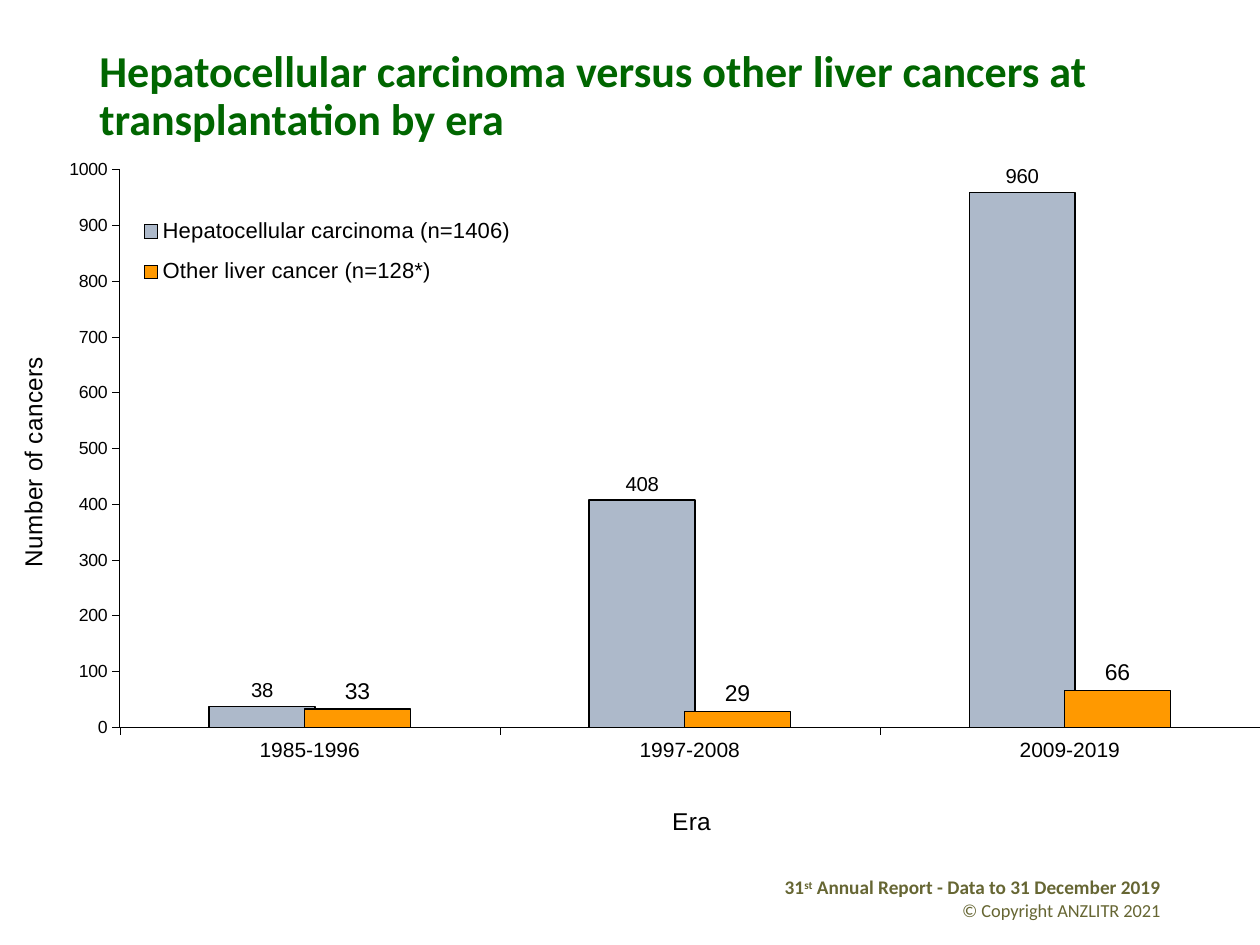
"""Build the slide on liver cancers at transplantation by era."""
from pptx import Presentation
from pptx.chart.data import CategoryChartData as Data
from pptx.dml.color import RGBColor as RGB
from pptx.enum.chart import XL_CHART_TYPE as Kind, XL_LABEL_POSITION as Spot
from pptx.enum.chart import XL_LEGEND_POSITION as Side, XL_TICK_MARK as Tick
from pptx.enum.text import MSO_ANCHOR as Anchor, PP_ALIGN as Align
from pptx.oxml import parse_xml
from pptx.oxml.ns import nsdecls, qn
from pptx.util import Inches, Pt

HUES = {"title": "006600", "foot": "666633", "ink": "000000",
        "main": "ADB9CA", "other": "FF9900"}
TITLE = "Hepatocellular carcinoma versus other liver cancers at transplantation by era"
FOOT = [
    (11, True, [("31", 0), ("st", 30000), (" Annual Report - Data to 31 December 2019", 0)]),
    (10.5, False, [("© Copyright ANZLITR 2021", 0)]),
]
ERAS = ["1985-1996", "1997-2008", "2009-2019"]
SERIES = [
    ("Hepatocellular carcinoma (n=1406)", [38, 408, 960], "main", 11.6),
    ("Other liver cancer (n=128*)", [33, 29, 66], "other", 13.1),
]
PLACES = [
    ("c:plotArea", 0, {"x": 0.095, "y": 0.031, "w": 0.905, "h": 0.812}),
    ("c:legend", 1, {"x": 0.1, "y": 0.08, "w": 0.32, "h": 0.14}),
    ("c:catAx/c:title", 1, {"x": 0.53, "y": 0.95}),
    ("c:valAx/c:title", 1, {"x": 0.01, "y": 0.3}),
]


def style(font, size, hue="ink", name="Arial", bold=False):
    font.size, font.name, font.bold = Pt(size), name, bold
    font.color.rgb = RGB.from_string(HUES[hue])


def add_box(slide, *place):
    box = slide.shapes.add_textbox(*map(Inches, place))
    box.text_frame.word_wrap = True
    return box.text_frame


def add_foot(slide):
    frame = add_box(slide, 5.89, 6.9, 3.42, 0.4)
    for i, (size, bold, parts) in enumerate(FOOT):
        para = frame.add_paragraph() if i else frame.paragraphs[0]
        para.alignment = Align.RIGHT
        style(para.font, size, "foot", "Calibri", bold)
        for text, lift in parts:
            run = para.add_run()
            run.text = text
            if lift:
                run._r.get_or_add_rPr().set("baseline", str(lift))


def set_axis(axis, title, size, width):
    axis.has_major_gridlines = False
    axis.major_tick_mark, axis.minor_tick_mark = Tick.OUTSIDE, Tick.NONE
    style(axis.tick_labels.font, size)
    axis.format.line.width = Pt(width)
    axis.format.line.color.rgb = RGB.from_string(HUES["ink"])
    frame = axis.axis_title.text_frame
    frame.text = title
    style(frame.paragraphs[0].font, 14)


def place_part(chart, tag, index, spots):
    part = chart.element.xpath(f".//{tag}")[0]
    for old in part.findall(qn("c:layout")):
        part.remove(old)
    inner = '<c:layoutTarget val="inner"/>' if tag == "c:plotArea" else ""
    modes = "".join(f'<c:{k}Mode val="edge"/>' for k in "xy")
    sizes = "".join(f'<c:{k} val="{v}"/>' for k, v in spots.items())
    part.insert(index, parse_xml(
        f'<c:layout {nsdecls("c")}><c:manualLayout>{inner}{modes}{sizes}'
        '</c:manualLayout></c:layout>'))


def add_bars(slide):
    data = Data()
    data.categories = ERAS
    for name, vals, *_ in SERIES:
        data.add_series(name, vals)
    chart = slide.shapes.add_chart(
        Kind.COLUMN_CLUSTERED, *map(Inches, (0, 1.18, 10, 5.51)), data).chart
    chart.has_title = False
    style(chart.font, 17.5, name="Montserrat", bold=True)
    plot = chart.plots[0]
    plot.gap_width, plot.overlap, plot.vary_by_categories = 169, 10, False
    for bars, (_, _, hue, size) in zip(plot.series, SERIES):
        bars.format.fill.solid()
        bars.format.fill.fore_color.rgb = RGB.from_string(HUES[hue])
        bars.format.line.width = Pt(0.75)
        bars.format.line.color.rgb = RGB.from_string(HUES["ink"])
        tags = bars.data_labels
        tags.show_value, tags.position = True, Spot.OUTSIDE_END
        style(tags.font, size)
    set_axis(chart.category_axis, "Era", 12, 0.19)
    axis = chart.value_axis
    set_axis(axis, "Number of cancers", 10.1, 0.57)
    axis.minimum_scale, axis.maximum_scale, axis.major_unit = 0, 1000, 100
    chart.has_legend = True
    chart.legend.position = Side.RIGHT
    chart.legend.include_in_layout = False
    style(chart.legend.font, 12.6)
    for place in PLACES:
        place_part(chart, *place)


def main():
    deck = Presentation()
    deck.slide_width, deck.slide_height = Inches(10), Inches(7.5)
    slide = deck.slides.add_slide(deck.slide_layouts[6])
    add_foot(slide)
    frame = add_box(slide, 0.69, 0.4, 8.62, 0.74)
    frame.vertical_anchor = Anchor.MIDDLE
    para = frame.paragraphs[0]
    para.text, para.line_spacing = TITLE, 0.9
    style(para.font, 25.2, "title", "Calibri", True)
    add_bars(slide)
    deck.save("out.pptx")


if __name__ == "__main__":
    main()
